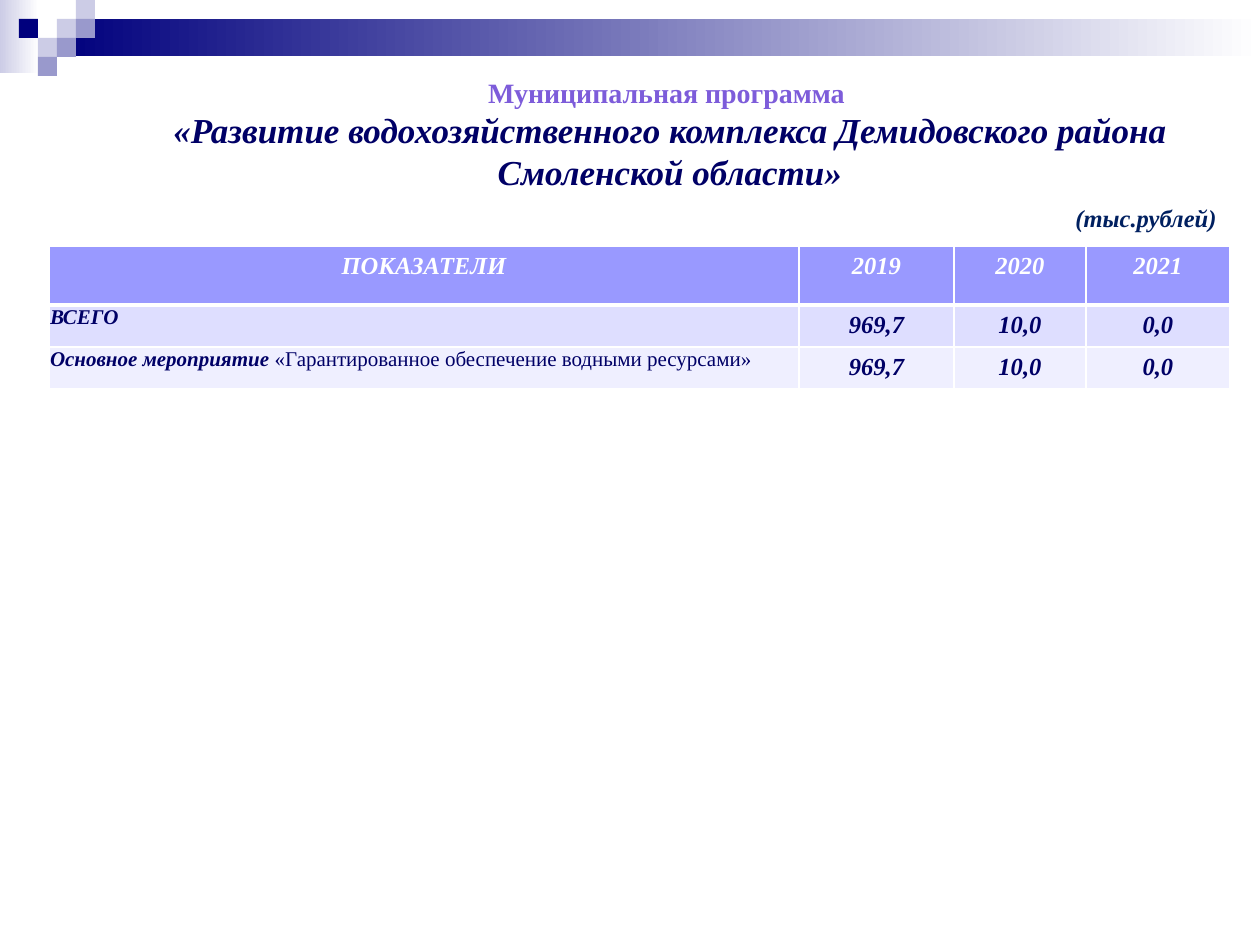
from dataclasses import dataclass

from lxml.etree import SubElement
from pptx import Presentation
from pptx.dml.color import RGBColor
from pptx.enum.shapes import MSO_SHAPE
from pptx.enum.text import MSO_ANCHOR, MSO_AUTO_SIZE, PP_ALIGN
from pptx.oxml.ns import qn
from pptx.util import Emu, Pt

EMU_PER_INCH = 914400
PX_PER_INCH = 126


@dataclass(frozen=True)
class Theme:
    font: str = "Times New Roman"
    white: str = "FFFFFF"
    navy: str = "00007D"
    pale: str = "CCCCE6"
    mid: str = "9999CC"
    ink: str = "000066"
    violet: str = "7D5CDA"
    unit_blue: str = "002060"
    header_fill: str = "9999FF"
    row_fills: tuple[str, ...] = ("DEDEFF", "EFEFFF")
    program_size: int = 20
    kicker_size: int = 16
    value_size: int = 14
    label_size: int = 12


@dataclass(frozen=True)
class Box:
    left: int
    top: int
    width: int
    height: int

    def emu(self) -> tuple[Emu, ...]:
        return tuple(map(px, (self.left, self.top, self.width, self.height)))


@dataclass(frozen=True)
class Indicator:
    name: str
    detail: str
    values: tuple[str, ...]


THEME = Theme()
SQUARE = 19
YEARS = ("2019", "2020", "2021")
INDICATORS = (
    Indicator("ВСЕГО", "", ("969,7", "10,0", "0,0")),
    Indicator("Основное мероприятие ",
              "«Гарантированное обеспечение водными ресурсами»",
              ("969,7", "10,0", "0,0")),
)
COLUMN_WIDTHS = (750, 155, 132, 144)
ROW_HEIGHTS = (59, 42, 41)


def px(length: int) -> Emu:
    return Emu(round(length * EMU_PER_INCH / PX_PER_INCH))


def style(font, size: int, color: str, bold: bool = True, italic: bool = True) -> None:
    font.name = THEME.font
    font.size = Pt(size)
    font.bold = bold
    font.italic = italic
    font.color.rgb = RGBColor.from_string(color)


def add_block(slide, box: Box, *colors: str) -> None:
    """Draw a borderless rectangle: one colour is solid, two fade left to right."""
    block = slide.shapes.add_shape(MSO_SHAPE.RECTANGLE, *box.emu())
    block.shadow.inherit = False
    block.line.fill.background()
    if len(colors) == 1:
        block.fill.solid()
        block.fill.fore_color.rgb = RGBColor.from_string(colors[0])
        return
    block.fill.gradient()
    block.fill.gradient_angle = 0
    for position, (stop, color) in enumerate(zip(block.fill.gradient_stops, colors)):
        stop.position = position
        stop.color.rgb = RGBColor.from_string(color)


def add_square(slide, column: int, row: int, color: str) -> None:
    add_block(slide, Box(column * SQUARE, row * SQUARE, SQUARE, SQUARE), color)


def add_banner(slide) -> None:
    add_block(slide, Box(0, 0, 39, 73), THEME.pale, THEME.white)
    add_block(slide, Box(57, 19, 1203, 37), THEME.navy, THEME.white)
    add_square(slide, 1, 1, THEME.navy)
    for column in (2, 3, 4):
        add_square(slide, column, 4 - column, THEME.pale)
        add_square(slide, column, 5 - column, THEME.mid)


def fill_title(slide) -> None:
    title = slide.shapes.title
    title.left, title.top, title.width, title.height = Box(129, 69, 1082, 131).emu()
    frame = title.text_frame
    frame.word_wrap = True
    frame.auto_size = MSO_AUTO_SIZE.SHAPE_TO_FIT_TEXT
    frame.vertical_anchor = MSO_ANCHOR.TOP
    kicker, program = frame.paragraphs[0], frame.add_paragraph()
    kicker.text = "Муниципальная программа "
    program.text = ("«Развитие водохозяйственного комплекса Демидовского района "
                    "Смоленской области»")
    kicker.alignment = program.alignment = PP_ALIGN.CENTER
    style(kicker.font, THEME.kicker_size, THEME.violet, italic=False)
    style(program.font, THEME.program_size, THEME.ink)


def add_unit_note(slide) -> None:
    frame = slide.shapes.add_textbox(*Box(1063, 197, 168, 43).emu()).text_frame
    frame.word_wrap = False
    frame.auto_size = MSO_AUTO_SIZE.SHAPE_TO_FIT_TEXT
    note = frame.paragraphs[0]
    note.text = "(тыс.рублей)"
    style(note.font, THEME.value_size, THEME.unit_blue)


def paint_cell(cell, fill: str, bottom_width: int = 1, top_width: int = 1) -> None:
    """Give the cell white borders, in points, and a solid fill."""
    properties = cell._tc.get_or_add_tcPr()
    for side, width in zip("LRTB", (1, 1, top_width, bottom_width)):
        line = SubElement(properties, qn(f"a:ln{side}"), w=str(Pt(width)))
        SubElement(SubElement(line, qn("a:solidFill")), qn("a:srgbClr"), val=THEME.white)
    cell.fill.solid()
    cell.fill.fore_color.rgb = RGBColor.from_string(fill)


def write_centered(cell, text: str, color: str) -> None:
    paragraph = cell.text_frame.paragraphs[0]
    paragraph.text = text
    paragraph.alignment = PP_ALIGN.CENTER
    style(paragraph.font, THEME.value_size, color)


def write_label(cell, indicator: Indicator) -> None:
    cell.margin_left = cell.margin_top = cell.margin_right = px(1)
    cell.margin_bottom = 0
    paragraph = cell.text_frame.paragraphs[0]
    for text, strong in ((indicator.name, True), (indicator.detail, False)):
        if text:
            run = paragraph.add_run()
            run.text = text
            style(run.font, THEME.label_size, THEME.ink, bold=strong, italic=strong)


def add_indicator_table(slide) -> None:
    box = Box(49, 246, sum(COLUMN_WIDTHS), sum(ROW_HEIGHTS))
    table = slide.shapes.add_table(len(ROW_HEIGHTS), len(COLUMN_WIDTHS), *box.emu()).table
    for column, width in zip(table.columns, COLUMN_WIDTHS):
        column.width = px(width)
    for row, height in zip(table.rows, ROW_HEIGHTS):
        row.height = px(height)

    for cell, heading in zip(table.rows[0].cells, ("ПОКАЗАТЕЛИ", *YEARS)):
        paint_cell(cell, THEME.header_fill, bottom_width=3)
        write_centered(cell, heading, THEME.white)
    for number, (indicator, fill) in enumerate(zip(INDICATORS, THEME.row_fills), start=1):
        label, *values = table.rows[number].cells
        for cell in (label, *values):
            paint_cell(cell, fill, top_width=3 if number == 1 else 1)
        write_label(label, indicator)
        for cell, value in zip(values, indicator.values):
            write_centered(cell, value, THEME.ink)


def main() -> None:
    deck = Presentation()
    deck.slide_width, deck.slide_height = px(1260), px(945)
    title_only = deck.slide_layouts[5]
    slide = deck.slides.add_slide(title_only)
    add_banner(slide)
    fill_title(slide)
    add_indicator_table(slide)
    add_unit_note(slide)
    deck.save("out.pptx")


if __name__ == "__main__":
    main()
